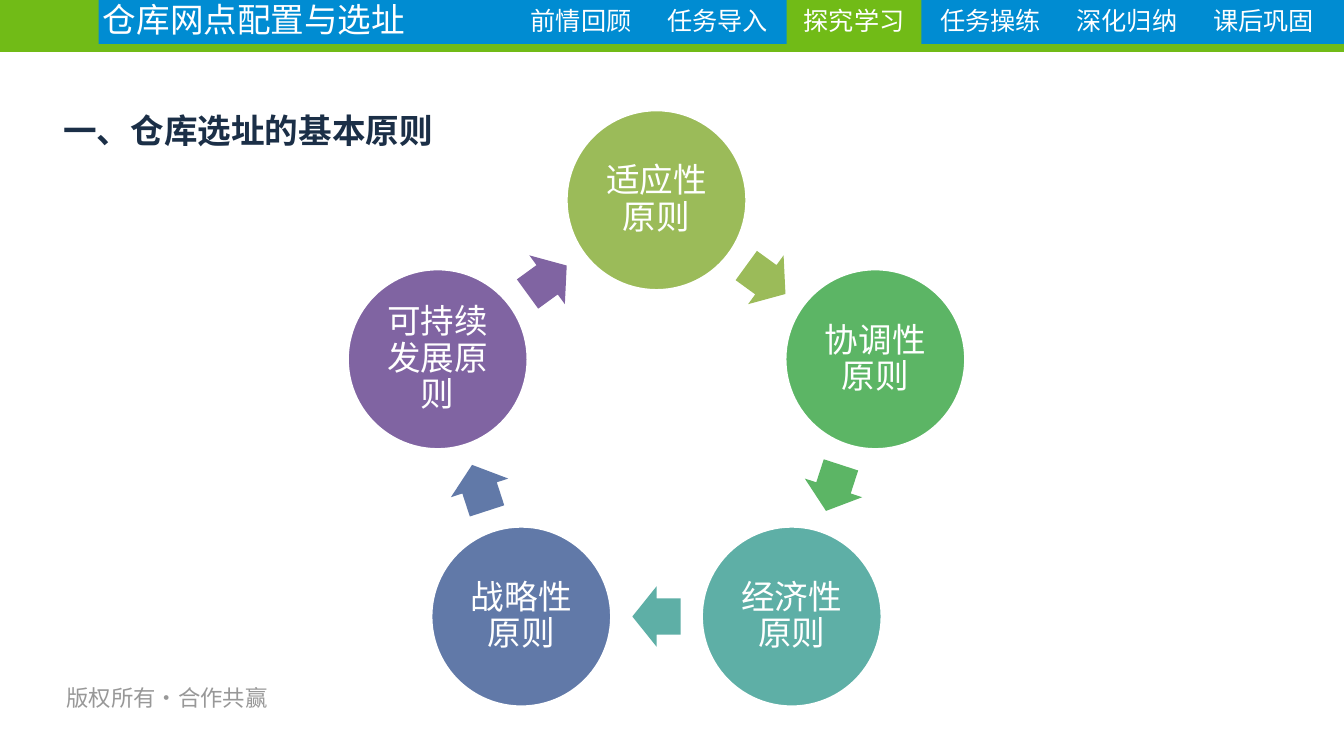
import math
from lxml import etree
from pptx import Presentation
from pptx.dml.color import RGBColor
from pptx.enum import shapes, text
from pptx.oxml import ns
from pptx.util import Cm, Pt

FONT = "Noto Sans CJK SC"
WHITE = RGBColor(0xFF, 0xFF, 0xFF)
BLUE = RGBColor(0x00, 0x8C, 0xD2)
GREEN = RGBColor(0x71, 0xBB, 0x17)
NAVY = RGBColor(0x1B, 0x2F, 0x47)
GREY = RGBColor(0x98, 0x98, 0x98)

TABS = ["前情回顾", "任务导入", "探究学习", "任务操练", "深化归纳", "课后巩固"]
ACTIVE_TAB = "探究学习"
PRINCIPLES = [
    ("适应性原则", RGBColor(0x9B, 0xBB, 0x59)),
    ("协调性原则", RGBColor(0x5C, 0xB5, 0x65)),
    ("经济性原则", RGBColor(0x5E, 0xAF, 0xA6)),
    ("战略性原则", RGBColor(0x61, 0x79, 0xA8)),
    ("可持续发展原则", RGBColor(0x80, 0x64, 0xA2)),
]


def write(shape, words, size, color, align=text.PP_ALIGN.LEFT, bold=False,
          anchor=text.MSO_ANCHOR.MIDDLE, inset=None, spacing=None, wrap=True):
    frame = shape.text_frame
    frame.auto_size = text.MSO_AUTO_SIZE.NONE
    frame.word_wrap = wrap
    frame.vertical_anchor = anchor
    if inset is not None:
        frame.margin_left = frame.margin_right = inset
        frame.margin_top = frame.margin_bottom = inset
    paragraph = frame.paragraphs[0]
    paragraph.text = words
    paragraph.alignment = align
    if spacing:
        paragraph.line_spacing = spacing
    font = paragraph.font
    font.size, font.bold, font.name = Pt(size), bold, FONT
    font.color.rgb = color
    defaults = paragraph._p.pPr.find(ns.qn("a:defRPr"))
    etree.SubElement(defaults, ns.qn("a:ea")).set("typeface", FONT)


def add_filled(slide, kind, left, top, width, height, color):
    shape = slide.shapes.add_shape(kind, left, top, width, height)
    shape.shadow.inherit = False
    shape.fill.solid()
    shape.fill.fore_color.rgb = color
    shape.line.fill.background()
    return shape


def add_header(slide, left, top, width, height):
    rectangle = shapes.MSO_SHAPE.RECTANGLE
    stripe = Cm(0.2)
    add_filled(slide, rectangle, left, top, width, height, BLUE)
    add_filled(slide, rectangle, left, top + height, width, stripe, GREEN)
    add_filled(slide, rectangle, left, top, Cm(2.49), height + stripe, GREEN)

    for index, label in enumerate(TABS):
        box = left + Cm(12.95 + 3.44 * index), top, Cm(3.4), height
        if label == ACTIVE_TAB:
            tab = add_filled(slide, rectangle, *box, GREEN)
        else:
            tab = slide.shapes.add_textbox(*box)
        write(tab, label, 18, WHITE, text.PP_ALIGN.CENTER)

    title = slide.shapes.title
    title.left, title.top = left + Cm(2.34), top - Cm(0.07)
    title.width, title.height = Cm(10.6), Cm(1.27)
    write(title, "仓库网点配置与选址", 24, WHITE)
    slide.shapes._spTree.append(title._element)


def add_heading(slide, left, top, width, height):
    heading = slide.shapes.add_textbox(left, top, width, height)
    write(heading, "一、仓库选址的基本原则", 24, NAVY, bold=True,
          anchor=text.MSO_ANCHOR.TOP, spacing=1.5, wrap=False)


def add_footer(slide, left, top, width, height):
    footer = slide.shapes.add_textbox(left, top, width, height)
    write(footer, "版权所有·合作共赢", 16, GREY,
          anchor=text.MSO_ANCHOR.TOP, inset=Cm(0.13))


def add_cycle(slide, left, top, width):
    diameter = Cm(4.55)
    arrow_width, arrow_height = Cm(1.22), Cm(1.52)
    circle_orbit, arrow_orbit = Cm(5.8), Cm(4.69)
    center_x = left + width / 2
    center_y = top + diameter / 2 + circle_orbit
    step = 360 / len(PRINCIPLES)

    def place(kind, angle, orbit, wide, high, color):
        x = center_x + orbit * math.sin(math.radians(angle)) - wide / 2
        y = center_y - orbit * math.cos(math.radians(angle)) - high / 2
        return add_filled(slide, kind, round(x), round(y), wide, high, color)

    for index, (principle, color) in enumerate(PRINCIPLES):
        angle = index * step
        circle = place(shapes.MSO_SHAPE.OVAL, angle, circle_orbit,
                       diameter, diameter, color)
        circle.line.color.rgb = WHITE
        circle.line.width = Pt(2)
        write(circle, principle, 24, WHITE, text.PP_ALIGN.CENTER,
              inset=Cm(0.08), spacing=0.9)

        arrow = place(shapes.MSO_SHAPE.RIGHT_ARROW, angle + step / 2,
                      arrow_orbit, arrow_width, arrow_height, color)
        arrow.adjustments[0] = 0.6
        arrow.adjustments[1] = 0.5
        arrow.rotation = angle + step / 2


def main():
    deck = Presentation()
    deck.slide_width, deck.slide_height = Cm(33.88), Cm(19.05)
    slide = deck.slides.add_slide(deck.slide_layouts[5])
    add_header(slide, 0, Cm(-0.08), deck.slide_width, Cm(1.19))
    add_footer(slide, Cm(1.55), Cm(17.12), Cm(5.38), Cm(0.94))
    add_heading(slide, Cm(1.35), Cm(2.13), Cm(9.9), Cm(1.63))
    add_cycle(slide, Cm(8.74), Cm(2.77), Cm(15.62))
    deck.save("out.pptx")


if __name__ == "__main__":
    main()
